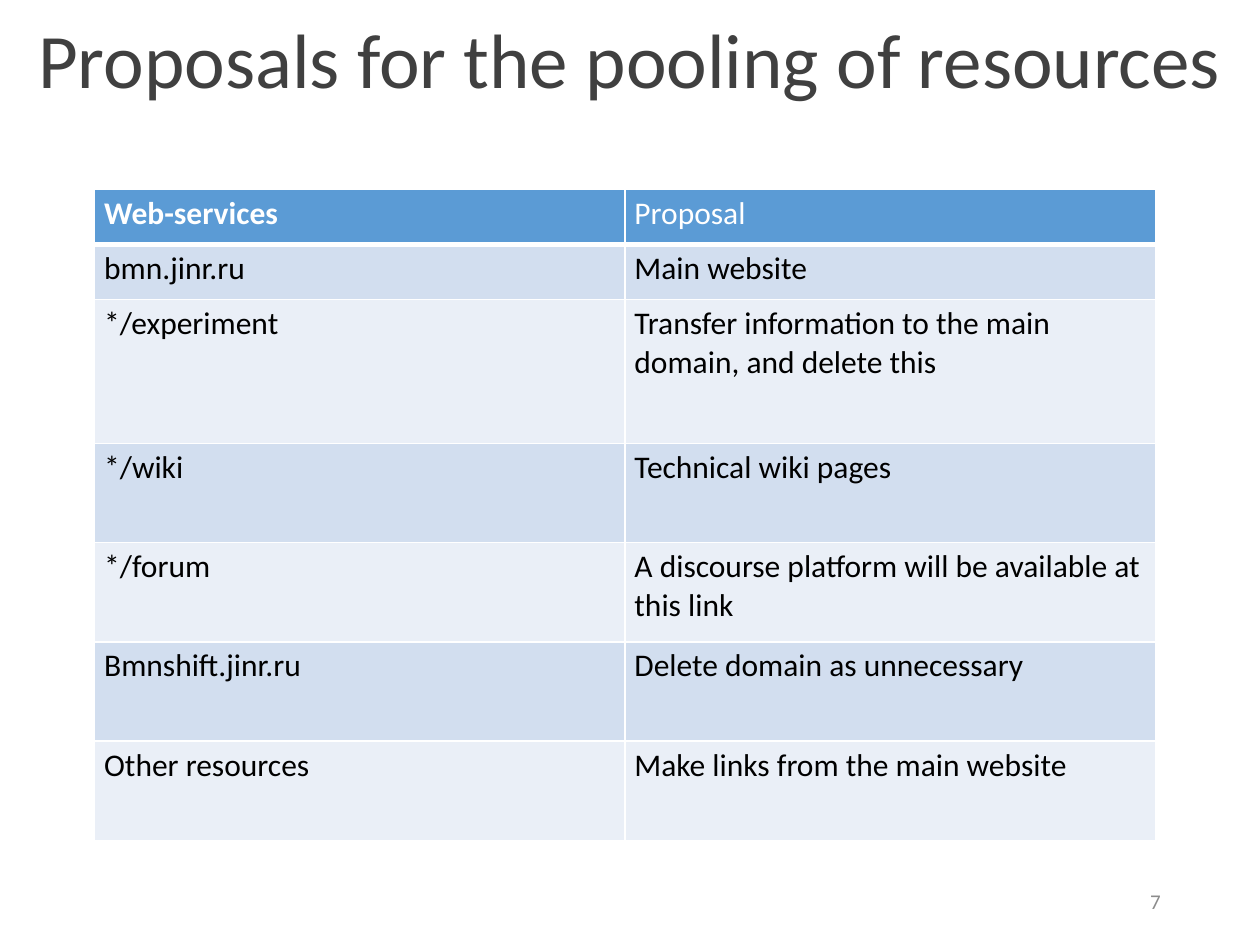
"""Build a slide listing proposals for pooling web resources."""
from dataclasses import dataclass

import lxml.etree
import pptx
import pptx.dml.color
import pptx.enum.text
import pptx.oxml.ns
import pptx.util

Cm, Pt = pptx.util.Cm, pptx.util.Pt
RGB = pptx.dml.color.RGBColor.from_string
Align = pptx.enum.text.PP_ALIGN
Anchor = pptx.enum.text.MSO_ANCHOR

HEADING = "Proposals for the pooling of resources"
PAGE = "7"
SERVICES = [
    ("Web-services", "Proposal", 1.11),
    ("bmn.jinr.ru", "Main website", 1.11),
    ("*/experiment", "Transfer information to the main domain, and delete this", 2.9),
    ("*/wiki", "Technical wiki pages", 2),
    ("*/forum", "A discourse platform will be available at this link", 2),
    ("Bmnshift.jinr.ru", "Delete domain as unnecessary", 2),
    ("Other resources", "Make links from the main website", 2),
]


@dataclass(frozen=True)
class Theme:
    font: str = "Calibri"
    heading: str = "404040"
    page: str = "8C8C8C"
    text: str = "000000"
    header_text: str = "FFFFFF"
    header: str = "5B9BD5"
    bands: tuple = ("EAEFF7", "D2DEEF")
    border: str = "FFFFFF"
    heading_size: int = 44
    table_size: int = 18
    page_size: int = 12
    thin: float = 1
    thick: float = 3


THEME = Theme()


def write(frame, text, *, size, color, bold=False, align=Align.LEFT,
          anchor=Anchor.TOP, spacing=1.0):
    frame.word_wrap = True
    frame.vertical_anchor = anchor
    paragraph = frame.paragraphs[0]
    paragraph.alignment = align
    paragraph.line_spacing = spacing
    run = paragraph.add_run()
    run.text = text
    run.font.name = THEME.font
    run.font.size = Pt(size)
    run.font.bold = bold
    run.font.color.rgb = RGB(color)


def place(shape, left, top, width, height):
    shape.left, shape.top = Cm(left), Cm(top)
    shape.width, shape.height = Cm(width), Cm(height)


def border(cell, widths):
    qn = pptx.oxml.ns.qn
    properties = cell._tc.get_or_add_tcPr()
    for position, (side, width) in enumerate(widths.items()):
        line = lxml.etree.Element(qn(f"a:ln{side}"), w=str(Pt(width)))
        fill = lxml.etree.SubElement(line, qn("a:solidFill"))
        lxml.etree.SubElement(fill, qn("a:srgbClr"), val=THEME.border)
        properties.insert(position, line)


def add_services(slide):
    total = sum(height for *_, height in SERVICES)
    table = slide.shapes.add_table(
        len(SERVICES), 2, Cm(1.91), Cm(3.82), Cm(21.38), Cm(total)).table
    for index, (*labels, height) in enumerate(SERVICES):
        table.rows[index].height = Cm(height)
        is_header = index == 0
        widths = {"L": THEME.thin, "R": THEME.thin,
                  "T": THEME.thick if index == 1 else THEME.thin,
                  "B": THEME.thick if is_header else THEME.thin}
        for column, label in enumerate(labels):
            cell = table.cell(index, column)
            cell.margin_left = cell.margin_right = Cm(0.19)
            cell.margin_top = cell.margin_bottom = Cm(0.1)
            cell.fill.solid()
            cell.fill.fore_color.rgb = RGB(
                THEME.header if is_header else THEME.bands[index % 2])
            border(cell, widths)
            write(cell.text_frame, label, size=THEME.table_size,
                  color=THEME.header_text if is_header else THEME.text,
                  bold=is_header and column == 0)


def main():
    deck = pptx.Presentation()
    deck.slide_width, deck.slide_height = Cm(25.4), Cm(19.05)
    slide = deck.slides.add_slide(deck.slide_layouts.get_by_name("Title Only"))

    add_services(slide)

    heading = slide.shapes.title
    place(heading, 0, 0, 25.4, 2.57)
    frame = heading.text_frame
    frame.auto_size = pptx.enum.text.MSO_AUTO_SIZE.NONE
    frame.margin_left = frame.margin_right = Cm(0.19)
    frame.margin_top = frame.margin_bottom = Cm(0.1)
    write(frame, HEADING, size=THEME.heading_size, color=THEME.heading,
          align=Align.CENTER, anchor=Anchor.MIDDLE, spacing=0.9)

    page = slide.shapes.add_textbox(Cm(17.93), Cm(17.65), Cm(5.72), Cm(1.02))
    write(page.text_frame, PAGE, size=THEME.page_size, color=THEME.page,
          align=Align.RIGHT, anchor=Anchor.MIDDLE)

    deck.save("out.pptx")


if __name__ == "__main__":
    main()
